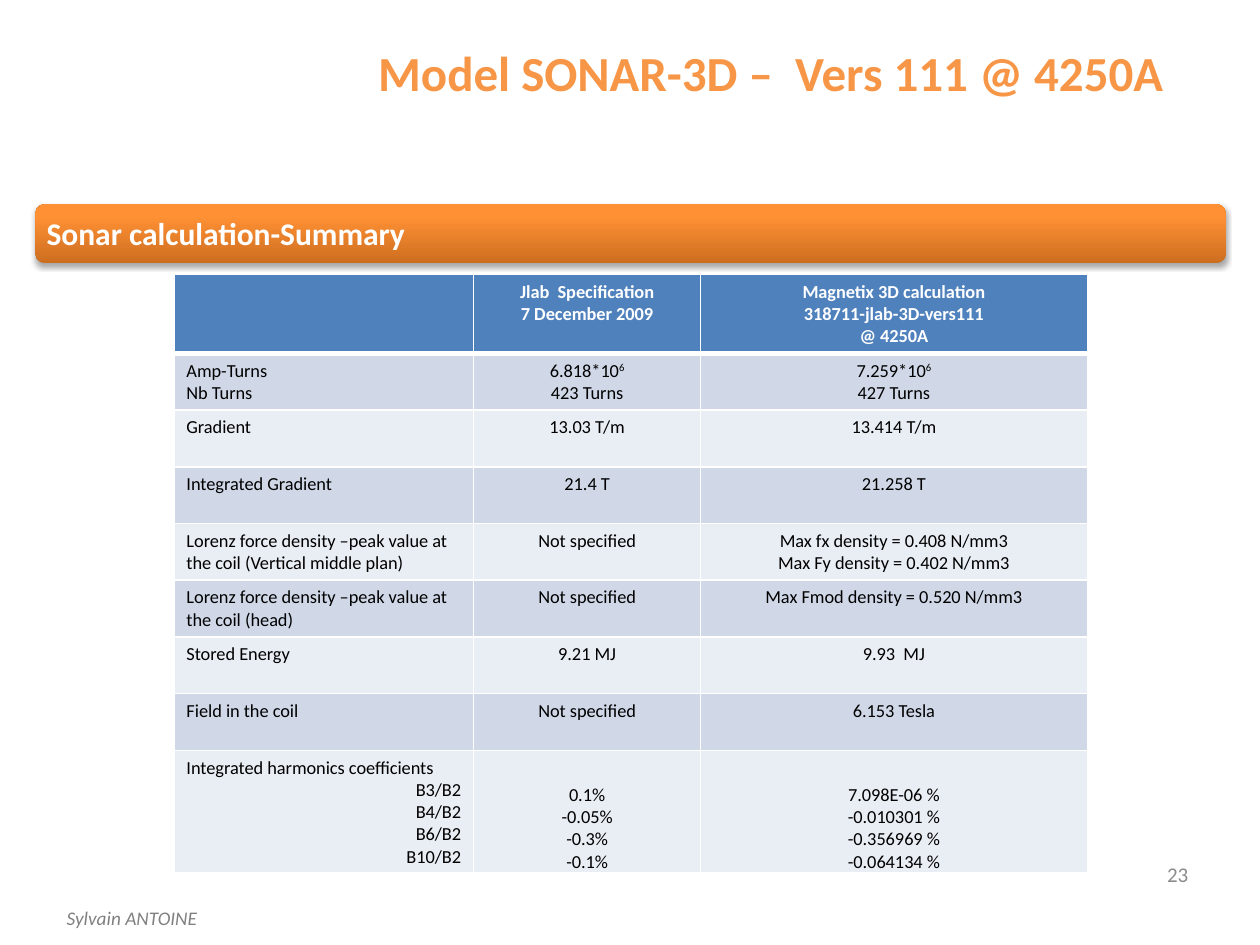
from dataclasses import dataclass

from lxml.etree import SubElement
from pptx import Presentation
from pptx.dml.color import RGBColor
from pptx.enum.shapes import MSO_SHAPE
from pptx.enum.text import MSO_ANCHOR as Anchor, MSO_AUTO_SIZE as AutoSize, PP_ALIGN as Align
from pptx.oxml import parse_xml
from pptx.oxml.ns import nsdecls, qn
from pptx.util import Inches, Pt


@dataclass(frozen=True)
class Theme:
    font: str = "Calibri"
    title: str = "F79646"
    footer: str = "808080"
    number: str = "8C8C8C"
    white: str = "FFFFFF"
    black: str = "000000"
    header: str = "4F81BD"
    bands: tuple = ("D0D8E8", "E9EDF4")
    bar_stops: tuple = ((0, "CC6E20"), (80, "FF9034"), (100, "FF9136"))
    title_size: float = 28
    bar_size: float = 18
    number_size: float = 12
    footer_size: float = 11
    table_size: float = 10.5


@dataclass(frozen=True)
class Label:
    text: str
    box: tuple
    size: float
    color: str
    align: Align = Align.LEFT
    anchor: Anchor = Anchor.TOP
    bold: bool = False
    italic: bool = False
    wrap: bool = True
    margin: float | None = None
    line_spacing: float | None = None


@dataclass(frozen=True)
class Row:
    name: str
    specification: str
    calculation: str
    height: float = 0.45


THEME = Theme()

HEADER = Row("", "Jlab  Specification\n7 December 2009",
             "Magnetix 3D calculation\n318711-jlab-3D-vers111\n@ 4250A", 0.6)
# A caret marks the start of an exponent
ROWS = [
    Row("Amp-Turns\nNb Turns", "6.818*10^6\n423 Turns", "7.259*10^6\n427 Turns"),
    Row("Gradient", "13.03 T/m", "13.414 T/m"),
    Row("Integrated Gradient", "21.4 T", "21.258 T"),
    Row("Lorenz force density –peak value at the coil (Vertical middle plan)",
        "Not specified", "Max fx density = 0.408 N/mm3\nMax Fy density = 0.402 N/mm3"),
    Row("Lorenz force density –peak value at the coil (head)",
        "Not specified", "Max Fmod density = 0.520 N/mm3"),
    Row("Stored Energy", "9.21 MJ", "9.93  MJ"),
    Row("Field in the coil", "Not specified", "6.153 Tesla"),
]
HARMONICS = Row("Integrated harmonics coefficients\nB3/B2\nB4/B2\nB6/B2\nB10/B2",
                "0.1%\n-0.05%\n-0.3%\n-0.1%",
                "7.098E-06 %\n-0.010301 %\n-0.356969 %\n-0.064134 %", 0.97)
COLUMNS = (2.38, 1.8, 3.07)


def style_font(paragraph, size: float, color: str, bold=False, italic=False) -> None:
    font = paragraph.font
    font.name, font.size = THEME.font, Pt(size)
    font.bold, font.italic = bold, italic
    font.color.rgb = RGBColor.from_string(color)


def set_margins(target, margin: float) -> None:
    target.margin_left = target.margin_right = Inches(margin)
    target.margin_top = target.margin_bottom = Inches(margin)


def add_label(shapes, label: Label) -> None:
    frame = shapes.add_textbox(*map(Inches, label.box)).text_frame
    frame.word_wrap = label.wrap
    frame.auto_size = AutoSize.NONE if label.wrap else AutoSize.SHAPE_TO_FIT_TEXT
    frame.vertical_anchor = label.anchor
    if label.margin is not None:
        set_margins(frame, label.margin)
    paragraph = frame.paragraphs[0]
    paragraph.text = label.text
    paragraph.alignment = label.align
    paragraph.line_spacing = label.line_spacing
    style_font(paragraph, label.size, label.color, label.bold, label.italic)


def add_bar(shapes, box: tuple) -> None:
    bar = shapes.add_shape(MSO_SHAPE.ROUNDED_RECTANGLE, *map(Inches, box))
    bar.line.fill.background()
    bar.fill.gradient()
    bar.fill.gradient_angle = 90
    properties = bar.element.spPr
    stops = properties.find(f".//{qn('a:gsLst')}")
    for stop in list(stops):
        stops.remove(stop)
    for position, color in THEME.bar_stops:
        stop = SubElement(stops, qn("a:gs"), pos=str(position * 1000))
        SubElement(stop, qn("a:srgbClr"), val=color)
    properties.append(parse_xml(
        f'<a:effectLst {nsdecls("a")}><a:outerShdw blurRad="{Pt(3.1)}" dist="{Pt(1.8)}" '
        f'dir="5400000" rotWithShape="0"><a:srgbClr val="{THEME.black}">'
        '<a:alpha val="35000"/></a:srgbClr></a:outerShdw></a:effectLst>'))


def set_borders(cell, top: float = 1, bottom: float = 1) -> None:
    properties = cell._tc.get_or_add_tcPr()
    widths = (("lnL", 1), ("lnR", 1), ("lnT", top), ("lnB", bottom))
    for index, (side, width) in enumerate(widths):
        properties.insert(index, parse_xml(
            f'<a:{side} {nsdecls("a")} w="{Pt(width)}"><a:solidFill>'
            f'<a:srgbClr val="{THEME.white}"/></a:solidFill></a:{side}>'))


def fill_cell(cell, text: str, fill: str, color: str, align: Align, bold: bool) -> None:
    cell.fill.solid()
    cell.fill.fore_color.rgb = RGBColor.from_string(fill)
    frame = cell.text_frame
    for index, line in enumerate(text.split("\n")):
        paragraph = frame.add_paragraph() if index else frame.paragraphs[0]
        paragraph.alignment = align
        style_font(paragraph, THEME.table_size, color, bold)
        base, _, exponent = line.partition("^")
        if base:
            paragraph.add_run().text = base
        if exponent:
            run = paragraph.add_run()
            run.text = exponent
            run.font._element.set("baseline", "30000")


def add_summary_table(shapes, left: float, top: float) -> None:
    rows = [HEADER, *ROWS, HARMONICS]
    table = shapes.add_table(
        len(rows), len(COLUMNS), Inches(left), Inches(top),
        Inches(sum(COLUMNS)), Inches(sum(row.height for row in rows))).table
    for column, width in zip(table.columns, COLUMNS):
        column.width = Inches(width)
    for r, row in enumerate(rows):
        table.rows[r].height = Inches(row.height)
        is_header = r == 0
        fill = THEME.header if is_header else THEME.bands[(r - 1) % 2]
        color = THEME.white if is_header else THEME.black
        for c, text in enumerate((row.name, row.specification, row.calculation)):
            cell = table.cell(r, c)
            fill_cell(cell, text, fill, color, Align.CENTER if c else Align.LEFT, is_header)
            set_borders(cell, top=3 if r == 1 else 1, bottom=3 if is_header else 1)

    # Harmonic orders sit right, their values along the bottom
    orders, *values = table.rows[len(rows) - 1].cells
    for paragraph in orders.text_frame.paragraphs[1:]:
        paragraph.alignment = Align.RIGHT
    for cell in values:
        cell.vertical_anchor = Anchor.BOTTOM
        set_margins(cell, 0)


def main() -> None:
    deck = Presentation()
    deck.slide_width, deck.slide_height = Inches(10), Inches(7.5)
    shapes = deck.slides.add_slide(deck.slide_layouts[6]).shapes

    # Footer, title and page number
    for label in (
        Label("Sylvain ANTOINE", (0.43, 7.14, 1.25, 0.29), THEME.footer_size,
              THEME.footer, italic=True, wrap=False),
        Label("Model SONAR-3D –  Vers 111 @ 4250A", (2.88, 0.29, 6.47, 0.57),
              THEME.title_size, THEME.title, Align.CENTER, bold=True, wrap=False),
        Label("23", (7.2, 6.74, 2.33, 0.4), THEME.number_size, THEME.number,
              Align.RIGHT, Anchor.MIDDLE),
    ):
        add_label(shapes, label)

    # Section bar
    section = shapes.add_group_shape().shapes
    add_bar(section, (0.28, 1.62, 9.45, 0.47))
    add_label(section, Label(
        "Sonar calculation-Summary", (0.3, 1.65, 9.4, 0.43), THEME.bar_size, THEME.white,
        Align.JUSTIFY, Anchor.MIDDLE, bold=True, margin=0.07, line_spacing=0.9))

    # Summary table
    add_summary_table(shapes, 1.38, 2.18)
    deck.save("out.pptx")


if __name__ == "__main__":
    main()
